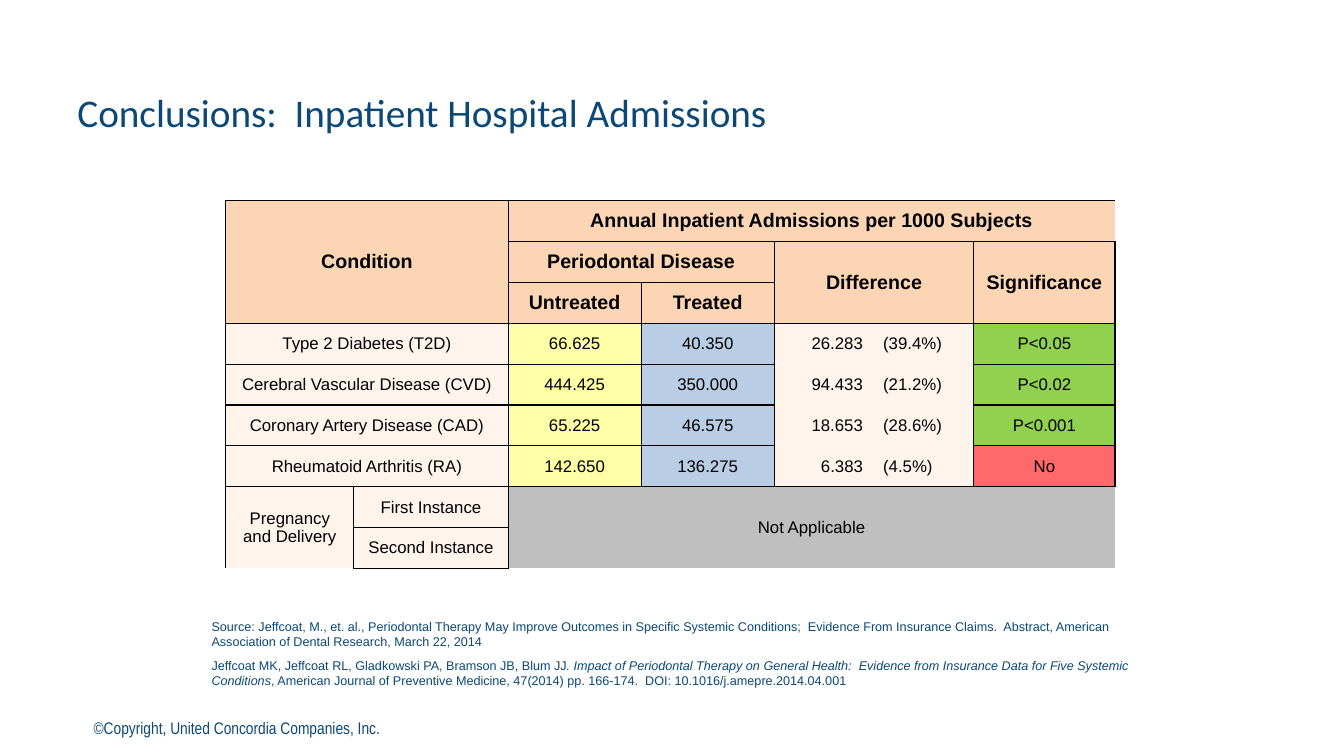
from lxml.etree import SubElement
from pptx import Presentation
from pptx.dml.color import RGBColor
from pptx.enum.text import MSO_ANCHOR, PP_ALIGN
from pptx.oxml.ns import qn
from pptx.util import Inches, Pt

NAVY, BLACK = "0B4878", "000000"
PEACH, CREAM, YELLOW, BLUE = "FCD5B5", "FEF4EC", "FFFFA7", "B9CDE5"
GREEN, RED, GRAY = "92D050", "FF6969", "BFBFBF"
COLUMN_WIDTHS = [1.27, 1.53, 1.32, 1.32, 0.98, 1, 1.4]
ROW_COUNT = 9
HEADER_ROWS = 3
TABLE_HEIGHT = 3.65

HEADERS = [
    (0, 0, 3, 2, "Condition"),
    (0, 2, 1, 5, "Annual Inpatient Admissions per 1000 Subjects"),
    (1, 2, 1, 2, "Periodontal Disease"),
    (1, 4, 2, 2, "Difference"),
    (1, 6, 2, 1, "Significance"),
    (2, 2, 1, 1, "Untreated"),
    (2, 3, 1, 1, "Treated"),
]
CONDITIONS = [
    ("Type 2 Diabetes (T2D)", "66.625", "40.350", "26.283", "(39.4%)", "P<0.05"),
    ("Cerebral Vascular Disease (CVD)", "444.425", "350.000", "94.433", "(21.2%)", "P<0.02"),
    ("Coronary Artery Disease (CAD)", "65.225", "46.575", "18.653", "(28.6%)", "P<0.001"),
    ("Rheumatoid Arthritis (RA)", "142.650", "136.275", "6.383", "(4.5%)", "No"),
]
PREGNANCY = [
    (7, 0, 2, 1, "Pregnancy and Delivery", CREAM),
    (7, 1, 1, 1, "First Instance", CREAM),
    (8, 1, 1, 1, "Second Instance", CREAM),
    (7, 2, 2, 5, "Not Applicable", GRAY),
]
SOURCES = [
    [("Source: Jeffcoat, M., et. al., Periodontal Therapy May Improve Outcomes in Specific "
      "Systemic Conditions;  Evidence From Insurance Claims.  Abstract, American Association "
      "of Dental Research, March 22, 2014", False)],
    [("Jeffcoat MK, Jeffcoat RL, Gladkowski PA, Bramson JB, Blum JJ", False),
     (". Impact of Periodontal Therapy on General Health:  Evidence from Insurance Data for "
      "Five Systemic Conditions", True),
     (", American Journal of Preventive Medicine, 47(2014) pp. 166-174.  "
      "DOI: 10.1016/j.amepre.2014.04.001", False)],
]


def color(value):
    return RGBColor.from_string(value)


def apply(target, values):
    for name, value in values.items():
        setattr(target, name, value)


class AdmissionsSlide:
    def __init__(self, presentation):
        self.slide = presentation.slides.add_slide(presentation.slide_layouts[6])

    def add_runs(self, paragraph, runs, size, font="Arial", ink=BLACK, bold=False, **layout):
        apply(paragraph, layout)
        for text, italic in runs:
            run = paragraph.add_run()
            run.text = text
            apply(run.font, {"name": font, "size": Pt(size), "bold": bold, "italic": italic})
            run.font.color.rgb = color(ink)

    def text(self, box, paragraphs, size, font, anchor=MSO_ANCHOR.TOP, gap=0, **layout):
        frame = self.slide.shapes.add_textbox(*map(Inches, box)).text_frame
        apply(frame, {"word_wrap": True, "vertical_anchor": anchor})
        for index, runs in enumerate(paragraphs):
            paragraph = frame.add_paragraph() if index else frame.paragraphs[0]
            if index:
                paragraph.space_before = Pt(gap)
            self.add_runs(paragraph, runs, size, font, NAVY, **layout)

    def table(self, left, top):
        frame = self.slide.shapes.add_table(
            ROW_COUNT, len(COLUMN_WIDTHS), Inches(left), Inches(top),
            Inches(sum(COLUMN_WIDTHS)), Inches(TABLE_HEIGHT))
        self.grid = frame.table
        for column, width in zip(self.grid.columns, COLUMN_WIDTHS):
            column.width = Inches(width)
        for row in self.grid.rows:
            row.height = Inches(TABLE_HEIGHT / ROW_COUNT)

    def borders(self, cell, sides):
        properties = cell._tc.get_or_add_tcPr()
        for side in "LRTB":
            line = SubElement(properties, qn(f"a:ln{side}"), w=str(Pt(1)))
            if side in sides:
                fill = SubElement(line, qn("a:solidFill"))
                SubElement(fill, qn("a:srgbClr"), val=BLACK)
            else:
                SubElement(line, qn("a:noFill"))

    def cell(self, row, column, rows, columns, text, fill, size=12, bold=False,
             align=PP_ALIGN.CENTER, open_sides=""):
        origin = self.grid.cell(row, column)
        last_row, last_column = row + rows - 1, column + columns - 1
        if rows * columns > 1:
            origin.merge(self.grid.cell(last_row, last_column))
        for r in range(row, last_row + 1):
            for c in range(column, last_column + 1):
                edges = {"L": c == column, "R": c == last_column,
                         "T": r == row, "B": r == last_row}
                member = self.grid.cell(r, c)
                self.borders(member, [side for side, outer in edges.items()
                                      if outer and side not in open_sides])
                member.fill.solid()
                member.fill.fore_color.rgb = color(fill)
        origin.vertical_anchor = MSO_ANCHOR.MIDDLE
        self.add_runs(origin.text_frame.paragraphs[0], [(text, False)], size,
                      bold=bold, alignment=align)

    def condition(self, index, values):
        name, untreated, treated, difference, percent, significance = values
        row = HEADER_ROWS + index
        inner = ("T" if index else "") + ("B" if index < len(CONDITIONS) - 1 else "")
        self.cell(row, 0, 1, 2, name, CREAM)
        self.cell(row, 2, 1, 1, untreated, YELLOW)
        self.cell(row, 3, 1, 1, treated, BLUE)
        self.cell(row, 4, 1, 1, difference, CREAM, align=PP_ALIGN.RIGHT, open_sides=inner + "R")
        self.cell(row, 5, 1, 1, percent, CREAM, align=PP_ALIGN.LEFT, open_sides=inner + "L")
        self.cell(row, 6, 1, 1, significance, RED if significance == "No" else GREEN)


def main():
    presentation = Presentation()
    apply(presentation, {"slide_width": Inches(13.33), "slide_height": Inches(7.5)})
    page = AdmissionsSlide(presentation)
    page.text((0, 7.07, 4.7, 0.3), [[("©Copyright, United Concordia Companies, Inc.", False)]],
              12, "Arial Narrow", alignment=PP_ALIGN.CENTER)
    page.text((0.67, 0.68, 12, 0.72), [[("Conclusions:  Inpatient Hospital Admissions", False)]],
              28, "Calibri", MSO_ANCHOR.BOTTOM, line_spacing=0.9)
    page.table(2.24, 1.99)
    for header in HEADERS:
        page.cell(*header, PEACH, size=14, bold=True)
    for index, values in enumerate(CONDITIONS):
        page.condition(index, values)
    for entry in PREGNANCY:
        page.cell(*entry)
    page.text((2, 6.09, 9.33, 0.74), SOURCES, 9, "Arial", gap=6)
    presentation.save("out.pptx")


if __name__ == "__main__":
    main()
